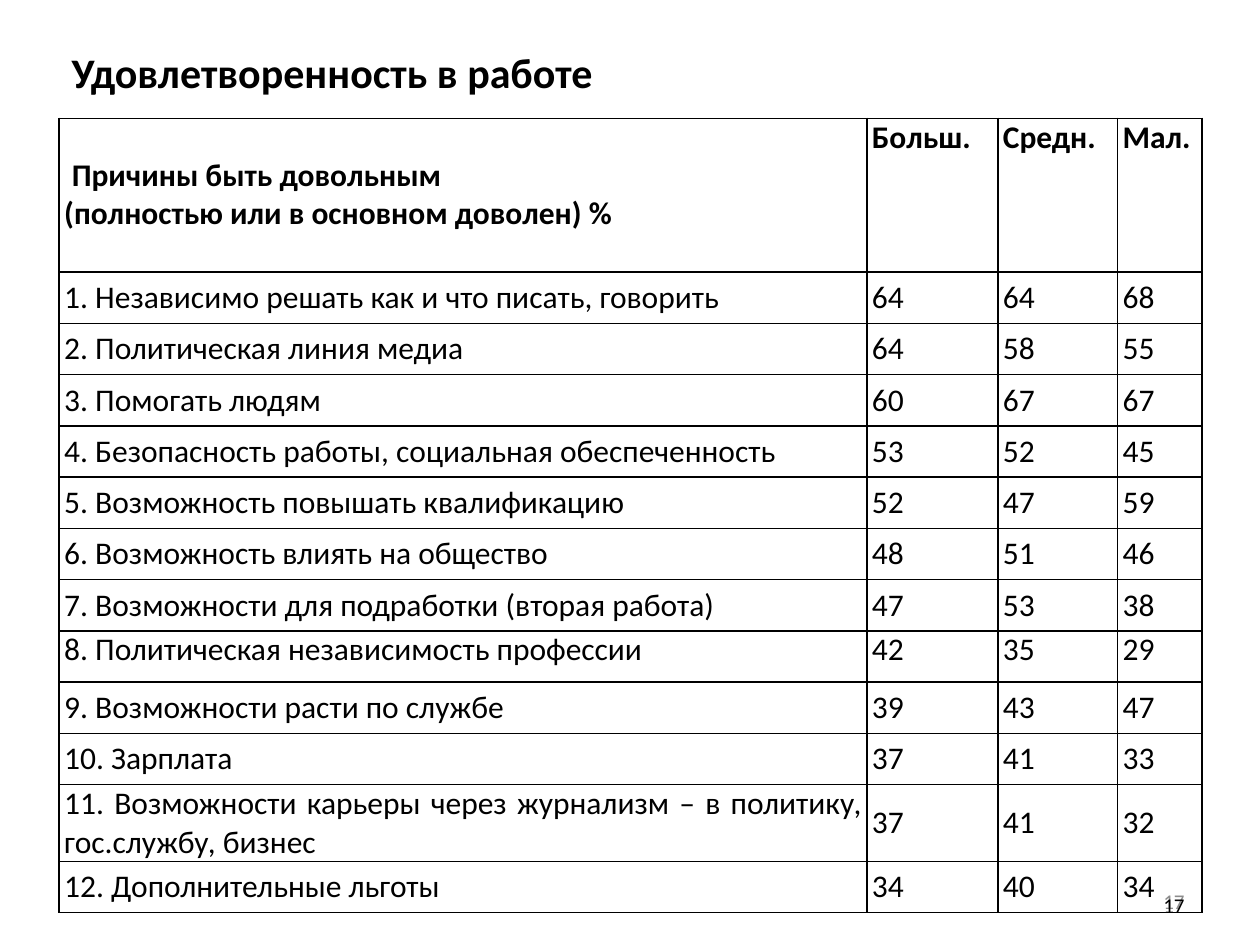
from dataclasses import dataclass

from lxml.etree import SubElement
from pptx import Presentation
from pptx.dml.color import RGBColor
from pptx.enum.text import MSO_ANCHOR, PP_ALIGN
from pptx.oxml.ns import qn
from pptx.util import Inches, Pt


@dataclass(frozen=True)
class Theme:
    font: str = "Calibri"
    ink: str = "000000"
    muted: str = "8C8C8C"
    title_size: int = 24
    table_size: int = 18
    number_size: int = 12
    border_width: int = 1
    cell_inset: float = 0.04


class SlideBuilder:
    """Places elements on a grid of 100 columns by 75 rows."""

    def __init__(self, presentation, theme):
        self.theme = theme
        self.slide = presentation.slides.add_slide(presentation.slide_layouts[6])
        self.column = presentation.slide_width / 100
        self.row = presentation.slide_height / 75

    def place(self, left, top, width, height):
        return (round(left * self.column), round(top * self.row),
                round(width * self.column), round(height * self.row))

    def style(self, paragraph, size, color, bold=False, align=PP_ALIGN.JUSTIFY):
        paragraph.alignment = align
        font = paragraph.font
        font.name, font.size, font.bold = self.theme.font, Pt(size), bold
        font.color.rgb = RGBColor.from_string(color)

    def text(self, words, area, size, color, bold=False, align=PP_ALIGN.JUSTIFY,
             anchor=MSO_ANCHOR.MIDDLE, wrap=True):
        frame = self.slide.shapes.add_textbox(*self.place(*area)).text_frame
        frame.word_wrap = wrap
        frame.vertical_anchor = anchor
        frame.text = words
        self.style(frame.paragraphs[0], size, color, bold, align)

    def border(self, cell):
        properties = cell._tc.get_or_add_tcPr()
        for position, side in enumerate(("a:lnL", "a:lnR", "a:lnT", "a:lnB")):
            line = SubElement(properties, qn(side), w=str(Pt(self.theme.border_width)))
            fill = SubElement(line, qn("a:solidFill"))
            SubElement(fill, qn("a:srgbClr"), val=self.theme.ink)
            properties.insert(position, line)

    def cell(self, cell, words, bold, anchor):
        cell.text = words
        cell.vertical_anchor = anchor
        cell.margin_left = cell.margin_right = Inches(self.theme.cell_inset)
        cell.margin_top = cell.margin_bottom = 0
        cell.fill.background()
        self.border(cell)
        for paragraph in cell.text_frame.paragraphs:
            self.style(paragraph, self.theme.table_size, self.theme.ink, bold)

    def table(self, rows, left, top, widths, heights, top_rows):
        area = self.place(left, top, sum(widths), sum(heights))
        table = self.slide.shapes.add_table(len(rows), len(widths), *area).table
        table.first_row = table.horz_banding = False
        for column, width in zip(table.columns, widths):
            column.width = round(width * self.column)
        for index, (values, height) in enumerate(zip(rows, heights)):
            table.rows[index].height = round(height * self.row)
            anchor = MSO_ANCHOR.TOP if index in top_rows else MSO_ANCHOR.MIDDLE
            for position, value in enumerate(values):
                self.cell(table.cell(index, position), str(value), index == 0, anchor)
        return table


HEADER = ("Причины быть довольным\n(полностью или в основном доволен) %",
          "Больш.", "Средн.", "Мал.")
REASONS = [
    ("Независимо решать как и что писать, говорить", 64, 64, 68),
    ("Политическая линия медиа", 64, 58, 55),
    ("Помогать людям", 60, 67, 67),
    ("Безопасность работы, социальная обеспеченность", 53, 52, 45),
    ("Возможность повышать квалификацию", 52, 47, 59),
    ("Возможность влиять на общество", 48, 51, 46),
    ("Возможности для подработки (вторая работа)", 47, 53, 38),
    ("Политическая независимость профессии", 42, 35, 29),
    ("Возможности расти по службе", 39, 43, 47),
    ("Зарплата", 37, 41, 33),
    ("Возможности карьеры через журнализм – в политику, гос.службу, бизнес", 37, 41, 32),
    ("Дополнительные льготы", 34, 40, 34),
]


def main():
    presentation = Presentation()
    presentation.slide_width, presentation.slide_height = Inches(10), Inches(7.5)
    theme = Theme()
    builder = SlideBuilder(presentation, theme)

    # Page numbers, behind the table
    builder.text("17", (71.7, 69.5, 23.3, 4), theme.number_size, theme.muted,
                 align=PP_ALIGN.RIGHT)
    builder.text("17", (71.7, 68.3, 23.3, 5), theme.number_size, theme.ink,
                 align=PP_ALIGN.RIGHT, anchor=MSO_ANCHOR.BOTTOM)

    # Satisfaction table: the header and reason 8 are set at the top
    rows = [HEADER] + [(f"{number}. {reason}", *shares)
                       for number, (reason, *shares) in enumerate(REASONS, 1)]
    heights = [12.2] + [4.07] * len(REASONS)
    heights[11] = 6.1
    table = builder.table(rows, 4.7, 9.4, (64.1, 10.4, 9.5, 6.7), heights,
                          top_rows=(0, 8))

    # The header text starts one line down, its first line slightly indented
    heading = table.cell(0, 0)
    heading.margin_top = Inches(0.3)
    first_line = heading.text_frame.paragraphs[0]
    first_line._p.get_or_add_pPr().set("indent", str(Inches(0.06)))

    # Title
    builder.text("Удовлетворенность в работе", (4.7, 3.2, 45.8, 5),
                 theme.title_size, theme.ink, bold=True, wrap=False)

    presentation.save("out.pptx")


if __name__ == "__main__":
    main()
